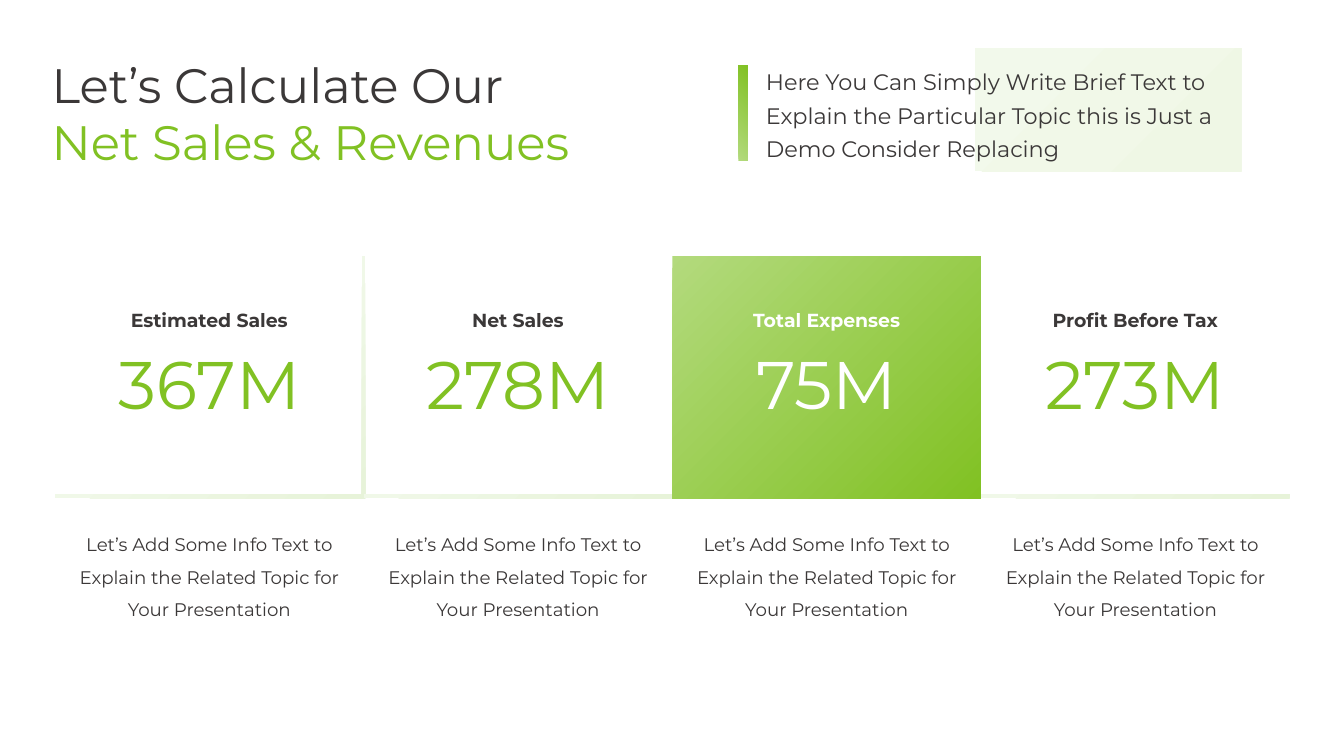
"""Builds the net sales and revenues slide with four key figures."""
from lxml import etree
from pptx import Presentation
from pptx.dml.color import RGBColor
from pptx.enum.shapes import MSO_SHAPE
from pptx.enum.text import MSO_ANCHOR, MSO_AUTO_SIZE, PP_ALIGN
from pptx.oxml.ns import qn
from pptx.util import Pt

RECTANGLE = MSO_SHAPE.RECTANGLE
TOP = MSO_ANCHOR.TOP
NO_AUTOFIT = MSO_AUTO_SIZE.NONE
LEFT, CENTER = PP_ALIGN.LEFT, PP_ALIGN.CENTER
FONT = "Montserrat"
COLORS = {
    "ink": "3B3838",
    "white": "FFFFFF",
    "green": "81C123",
    "light green": "B3DA7D",
    "rule": "E7F3D9",
    "light rule": "F0F8E8",
    "panel": "EFF7E5",
    "light panel": "F2F9EB",
}
COLUMN_LEFT, COLUMN_WIDTH = 39.2, 220.5
CARD_TOP, CARD_HEIGHT = 183, 172.8
RULE_WIDTH = 2.6
FIGURES = [
    ("Estimated Sales", "367M"),
    ("Net Sales", "278M"),
    ("Total Expenses", "75M"),
    ("Profit Before Tax", "273M"),
]
HIGHLIGHT = "Total Expenses"
INFO = ["Let’s Add Some Info Text to", "Explain the Related Topic for", "Your Presentation"]
BRIEF = [
    "Here You Can Simply Write Brief Text to",
    "Explain the Particular Topic this is Just a",
    "Demo Consider Replacing",
]


def add_gradient_block(left, top, width, height, near, far, focus="br"):
    """Add a rectangle shaded outwards from one corner."""
    block = slide.shapes.add_shape(RECTANGLE, Pt(left), Pt(top), Pt(width), Pt(height))
    block.shadow.inherit = False
    block.line.fill.background()
    block.fill.gradient()
    for stop, color in zip(block.fill.gradient_stops, (near, far)):
        stop.color.rgb = RGBColor.from_string(COLORS[color])
    gradient = block._element.spPr.find(qn("a:gradFill"))
    gradient.remove(gradient.find(qn("a:lin")))
    shade = etree.SubElement(gradient, qn("a:path"), path="circle")
    opposite = {"br": ("l", "t"), "tr": ("l", "b")}[focus]
    etree.SubElement(shade, qn("a:fillToRect"), {side: "100000" for side in opposite})


def write_lines(holder, lines, size, colors, align=LEFT, bold=False, spacing=None):
    """Write one paragraph per line, each in its own colour."""
    frame = holder.text_frame
    frame.word_wrap = True
    frame.auto_size = NO_AUTOFIT
    frame.vertical_anchor = TOP
    frame.text = "\n".join(lines)
    for paragraph, color in zip(frame.paragraphs, colors):
        paragraph.alignment = align
        paragraph.line_spacing = spacing
        paragraph.font.name = FONT
        paragraph.font.size = Pt(size)
        paragraph.font.bold = bold
        paragraph.font.color.rgb = RGBColor.from_string(COLORS[color])


deck = Presentation()
deck.slide_width, deck.slide_height = Pt(960), Pt(540)
slide = deck.slides.add_slide(deck.slide_layouts[5])

headline = slide.shapes.title
headline.left, headline.top, headline.width, headline.height = Pt(29.7), Pt(35.5), Pt(440), Pt(90.7)
write_lines(headline, ["Let’s Calculate Our", "Net Sales & Revenues"], 34.5, ["ink", "green"])

add_gradient_block(696.5, 34.6, 190.5, 87.8, "panel", "light panel")
add_gradient_block(527.5, 46.5, 6.5, 68.5, "green", "light green", focus="tr")
brief = slide.shapes.add_textbox(Pt(540), Pt(40.3), Pt(350), Pt(78))
write_lines(brief, BRIEF, 16, ["ink"] * 3, spacing=Pt(24))

add_gradient_block(COLUMN_LEFT + COLUMN_WIDTH - RULE_WIDTH / 2, CARD_TOP,
                   RULE_WIDTH, CARD_HEIGHT, "rule", "light rule")

for index, (label, amount) in enumerate(FIGURES):
    left = COLUMN_LEFT + index * COLUMN_WIDTH
    if label == HIGHLIGHT:
        add_gradient_block(left, CARD_TOP, COLUMN_WIDTH, CARD_HEIGHT, "green", "light green")
        label_color = amount_color = "white"
    else:
        add_gradient_block(left, CARD_TOP + CARD_HEIGHT - RULE_WIDTH,
                           COLUMN_WIDTH, RULE_WIDTH, "rule", "light rule")
        label_color, amount_color = "ink", "green"

    caption = slide.shapes.add_textbox(Pt(left), Pt(216.7), Pt(COLUMN_WIDTH), Pt(23.8))
    write_lines(caption, [label], 13.5, [label_color], CENTER, bold=True)
    value = slide.shapes.add_textbox(Pt(left), Pt(241.2), Pt(COLUMN_WIDTH), Pt(65.5))
    write_lines(value, [amount], 48, [amount_color], CENTER)
    info = slide.shapes.add_textbox(Pt(left), Pt(369.4), Pt(COLUMN_WIDTH), Pt(75.6))
    write_lines(info, INFO, 13, ["ink"] * 3, CENTER, spacing=1.5)

deck.save("out.pptx")
